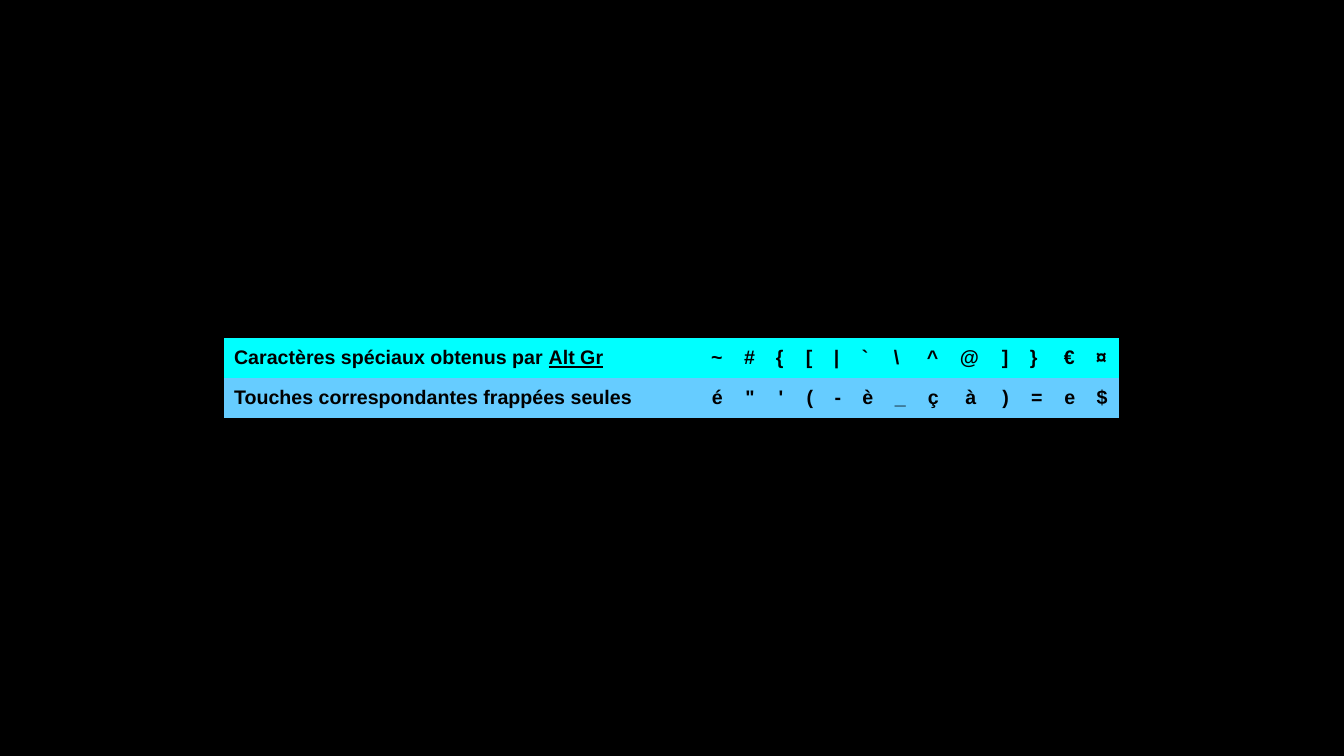
import dataclasses

import pptx
import pptx.dml.color
import pptx.enum.text
import pptx.oxml.ns
import pptx.table
import pptx.util

EMU_PER_PX = 12192000 / 1344
COLOURS = {"background": "000000", "text": "000000", "alt_gr": "00FFFF", "alone": "66CCFF"}
NO_STYLE_NO_GRID = "{2D5ABB26-0587-4C30-8999-92F81FD0307C}"
TABLE_LEFT, TABLE_TOP, ROW_HEIGHT = 224, 338, 40
COLUMN_WIDTHS = [477, 33, 32, 30, 28, 28, 32, 33, 33, 42, 28, 34, 32, 33]


@dataclasses.dataclass(frozen=True)
class KeyRow:
    label: str
    underlined: str
    characters: str
    colour: str
    alignment: pptx.enum.text.PP_ALIGN


KEY_ROWS = [
    KeyRow("Caractères spéciaux obtenus par ", "Alt Gr", "~#{[|`\\^@]}€¤",
           "alt_gr", pptx.enum.text.PP_ALIGN.LEFT),
    KeyRow("Touches correspondantes frappées seules", "", "é\"'(-è_çà)=e$",
           "alone", pptx.enum.text.PP_ALIGN.CENTER),
]


def px(length: int) -> pptx.util.Emu:
    return pptx.util.Emu(round(length * EMU_PER_PX))


def rgb(name: str) -> pptx.dml.color.RGBColor:
    return pptx.dml.color.RGBColor.from_string(COLOURS[name])


def fill_cell(cell: pptx.table._Cell, text: str, colour: str,
              alignment: pptx.enum.text.PP_ALIGN, underlined: str = "") -> None:
    """Colour the cell and write its text, ending with the underlined part."""
    cell.fill.solid()
    cell.fill.fore_color.rgb = rgb(colour)
    cell.vertical_anchor = pptx.enum.text.MSO_ANCHOR.MIDDLE
    paragraph = cell.text_frame.paragraphs[0]
    paragraph.text = text
    paragraph.alignment = alignment
    if underlined:
        key_name = paragraph.add_run()
        key_name.text = underlined
        key_name.font.underline = True
    for run in paragraph.runs:
        run.font.name = "Arial"
        run.font.size = pptx.util.Pt(14)
        run.font.bold = True
        run.font.color.rgb = rgb("text")


def main() -> None:
    presentation = pptx.Presentation()
    presentation.slide_width, presentation.slide_height = px(1344), px(756)
    slide = presentation.slides.add_slide(presentation.slide_layouts[6])
    slide.background.fill.solid()
    slide.background.fill.fore_color.rgb = rgb("background")

    keys = slide.shapes.add_table(
        len(KEY_ROWS), len(COLUMN_WIDTHS), px(TABLE_LEFT), px(TABLE_TOP),
        px(sum(COLUMN_WIDTHS)), px(ROW_HEIGHT * len(KEY_ROWS))).table
    keys.first_row = keys.horz_banding = False
    keys._tbl.tblPr.find(pptx.oxml.ns.qn("a:tableStyleId")).text = NO_STYLE_NO_GRID
    for column, width in zip(keys.columns, COLUMN_WIDTHS):
        column.width = px(width)

    for row_index, key_row in enumerate(KEY_ROWS):
        keys.rows[row_index].height = px(ROW_HEIGHT)
        fill_cell(keys.cell(row_index, 0), key_row.label, key_row.colour,
                  pptx.enum.text.PP_ALIGN.LEFT, key_row.underlined)
        for column_index, character in enumerate(key_row.characters, start=1):
            fill_cell(keys.cell(row_index, column_index), character,
                      key_row.colour, key_row.alignment)

    presentation.save("out.pptx")


if __name__ == "__main__":
    main()
